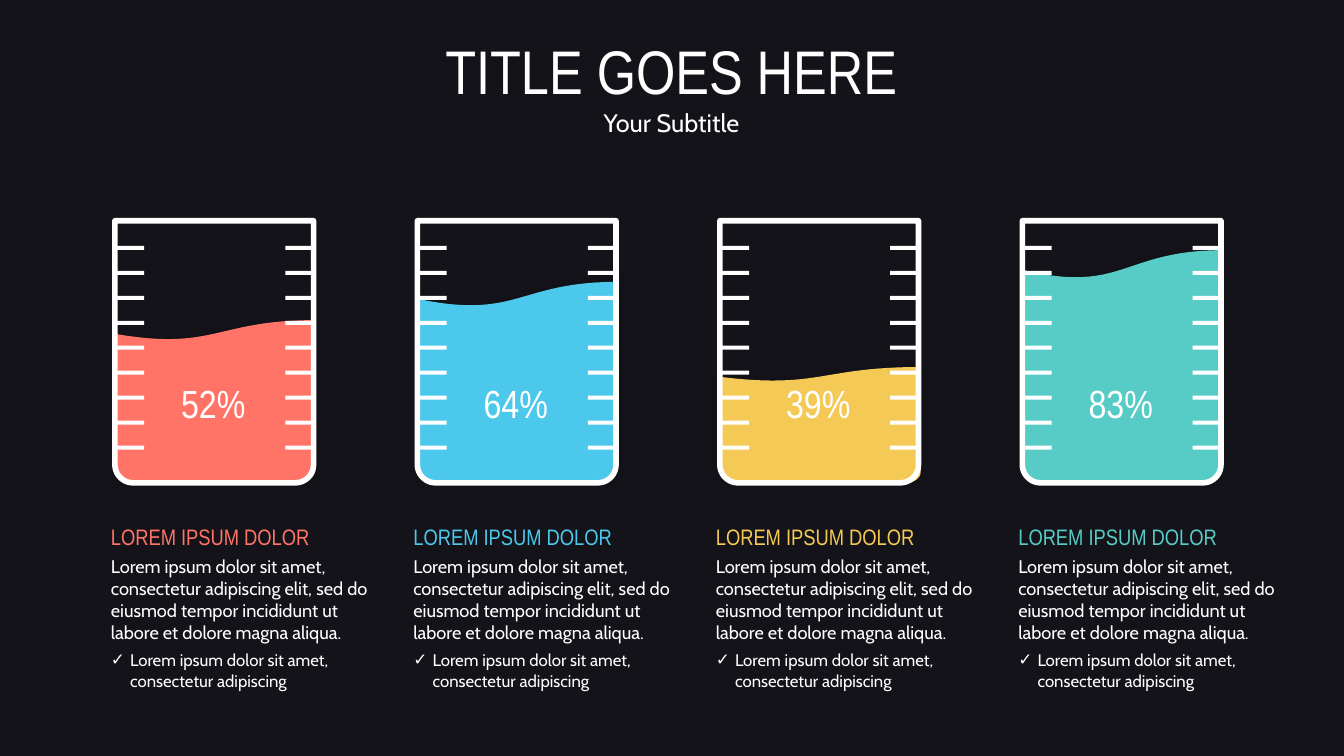
import dataclasses
import typing

import pptx
import pptx.dml.color
import pptx.enum.text
import pptx.oxml
import pptx.oxml.ns
import pptx.util
from pptx.util import Inches

WHITE = "FFFFFF"
BACKGROUND = "14131A"
HEADING_FONT = "Arial Narrow"
BODY_FONT = "Cabin"
COLUMN_PITCH = 3
BEAKER_TOP, BEAKER_BOTTOM = 2.19, 4.79
LIQUID_BOTTOM = 4.8
TICK_COUNT, TICK_TOP, TICK_PITCH = 9, 2.44, 0.2475
TICK_WIDTH, TICK_HEIGHT = 0.3, 0.04

Point = tuple[float, float]


@dataclasses.dataclass(frozen=True)
class Beaker:
    percent: str
    color: str
    liquid_top: float


BEAKERS = [
    Beaker("52%", "FF7467", 3.09),
    Beaker("64%", "4CC8EC", 2.69),
    Beaker("39%", "F4C956", 3.58),
    Beaker("83%", "57CCC6", 2.36),
]


def rgb(color: str) -> pptx.dml.color.RGBColor:
    return pptx.dml.color.RGBColor.from_string(color)


def curve(start: Point, first: Point, second: Point, end: Point, steps: int = 24) -> list[Point]:
    """Return points along a cubic Bezier curve."""
    points = []
    for step in range(steps + 1):
        t = step / steps
        weights = ((1 - t) ** 3, 3 * t * (1 - t) ** 2, 3 * t**2 * (1 - t), t**3)
        points.append(tuple(
            sum(weight * point[axis] for weight, point in zip(weights, (start, first, second, end)))
            for axis in (0, 1)
        ))
    return points


def rounded_bottom(left: float, right: float, bottom: float, radius: Point) -> list[Point]:
    """Return the lower edge from right to left, with both corners rounded."""
    across, up = radius
    return curve(
        (right, bottom - up), (right, bottom - up * 0.45),
        (right - across * 0.45, bottom), (right - across, bottom),
    ) + curve(
        (left + across, bottom), (left + across * 0.45, bottom),
        (left, bottom - up * 0.45), (left, bottom - up),
    )


def add_outline(shapes: typing.Any, contours: list[list[Point]]) -> typing.Any:
    """Add one freeform made of closed contours, without fill or line."""
    contours = [[(Inches(x), Inches(y)) for x, y in contour] for contour in contours]
    builder = shapes.build_freeform(*contours[0][0])
    builder.add_line_segments(contours[0][1:])
    for contour in contours[1:]:
        builder.move_to(*contour[0])
        builder.add_line_segments(contour[1:])
    shape = builder.convert_to_shape()
    shape.shadow.inherit = False
    shape.fill.background()
    shape.line.fill.background()
    return shape


def fill_shape(shape: typing.Any, color: str) -> None:
    shape.fill.solid()
    shape.fill.fore_color.rgb = rgb(color)


def add_glow_shadow(shape: typing.Any) -> None:
    effects = shape.element.spPr.find(pptx.oxml.ns.qn("a:effectLst"))
    effects.append(pptx.oxml.parse_xml(
        f'<a:outerShdw {pptx.oxml.ns.nsdecls("a")} blurRad="{pptx.util.Pt(6)}" dist="0" dir="13500000">'
        '<a:srgbClr val="000000"><a:alpha val="20000"/></a:srgbClr></a:outerShdw>'
    ))


def add_liquid(shapes: typing.Any, beaker: Beaker, offset: float) -> None:
    left, right = offset + 1.14, offset + 3.13
    middle = (left + right) / 2
    top = beaker.liquid_top
    depth = LIQUID_BOTTOM - top
    left_level, dip, right_level = (top + depth * share for share in (0.13, 0.23, 0.05))
    surface = curve((left, left_level), (middle, dip), (middle, right_level), (right, right_level))
    bottom = rounded_bottom(left, right, LIQUID_BOTTOM, (0.19, depth * 0.09))
    liquid = add_outline(shapes, [[(right, top)] + bottom + surface])
    fill_shape(liquid, beaker.color)
    add_glow_shadow(liquid)


def add_glass(shapes: typing.Any, offset: float) -> None:
    """Add the beaker outline with its scale as one group."""
    group = shapes.add_group_shape()
    left, right = offset + 1.14, offset + 3.11
    bottom = rounded_bottom(left, right, BEAKER_BOTTOM, (0.18, 0.18))
    glass = add_outline(group.shapes, [[(left, BEAKER_TOP), (right, BEAKER_TOP)] + bottom])
    glass.line.color.rgb = rgb(WHITE)
    glass.line.width = pptx.util.Pt(4)
    for row in range(TICK_COUNT):
        top = TICK_TOP + row * TICK_PITCH
        ticks = [
            [(x, top), (x + TICK_WIDTH, top), (x + TICK_WIDTH, top + TICK_HEIGHT), (x, top + TICK_HEIGHT)]
            for x in (offset + 2.83, offset + 1.13)
        ]
        fill_shape(add_outline(group.shapes, ticks), WHITE)


def place(shape: typing.Any, left: float, top: float, width: float, height: float) -> None:
    shape.left, shape.top = Inches(left), Inches(top)
    shape.width, shape.height = Inches(width), Inches(height)
    frame = shape.text_frame
    frame.word_wrap = True
    frame.auto_size = pptx.enum.text.MSO_AUTO_SIZE.NONE
    frame.vertical_anchor = pptx.enum.text.MSO_ANCHOR.TOP


def format_paragraph(
    paragraph: typing.Any, font: str, size: float, color: str = WHITE,
    centered: bool = False, before: float = 0, bullet: str = "",
) -> None:
    indent = Inches(0.19) if bullet else 0
    properties = paragraph._p.get_or_add_pPr()
    properties.set("marL", str(indent))
    properties.set("indent", str(-indent))
    mark = f'a:buChar char="{bullet}"' if bullet else "a:buNone"
    properties.append(pptx.oxml.parse_xml(f'<{mark} {pptx.oxml.ns.nsdecls("a")}/>'))
    alignment = pptx.enum.text.PP_ALIGN
    paragraph.alignment = alignment.CENTER if centered else alignment.LEFT
    paragraph.space_before = pptx.util.Pt(before)
    paragraph.font.name = font
    paragraph.font.size = pptx.util.Pt(size)
    paragraph.font.bold = False
    paragraph.font.color.rgb = rgb(color)


def fill_description(placeholder: typing.Any, color: str, offset: float) -> None:
    place(placeholder, offset + 1, 5.14, 2.78, 1.78)
    placeholder.text_frame.text = "\n".join([
        "LOREM IPSUM DOLOR",
        "Lorem ipsum dolor sit amet, consectetur adipiscing elit, "
        "sed do eiusmod tempor incididunt ut labore et dolore magna aliqua.",
        "Lorem ipsum dolor sit amet, consectetur adipiscing",
    ])
    heading, body, item = placeholder.text_frame.paragraphs
    format_paragraph(heading, HEADING_FONT, 16, color)
    format_paragraph(body, BODY_FONT, 13, before=4)
    format_paragraph(item, BODY_FONT, 12, before=5, bullet="✓")


def add_percent(shapes: typing.Any, percent: str, offset: float) -> None:
    label = shapes.add_textbox(0, 0, 0, 0)
    place(label, offset + 1.74, 3.76, 0.75, 0.47)
    frame = label.text_frame
    frame.margin_left = frame.margin_top = frame.margin_right = frame.margin_bottom = 0
    frame.text = percent
    format_paragraph(frame.paragraphs[0], HEADING_FONT, 28, centered=True)


def main() -> None:
    presentation = pptx.Presentation()
    presentation.slide_width, presentation.slide_height = Inches(13.33), Inches(7.5)
    slide = presentation.slides.add_slide(presentation.slide_layouts.get_by_name("Comparison"))
    fill_shape(slide.background, BACKGROUND)

    title, *descriptions = slide.placeholders
    place(title, 3.65, 0.28, 6.02, 1.14)
    title.text_frame.text = "TITLE GOES HERE\nYour Subtitle"
    heading, subtitle = title.text_frame.paragraphs
    format_paragraph(heading, HEADING_FONT, 44, centered=True)
    format_paragraph(subtitle, BODY_FONT, 18, centered=True)

    for column, (beaker, description) in enumerate(zip(BEAKERS, descriptions)):
        offset = column * COLUMN_PITCH
        fill_description(description, beaker.color, offset)
        add_liquid(slide.shapes, beaker, offset)
        add_glass(slide.shapes, offset)
        add_percent(slide.shapes, beaker.percent, offset)

    presentation.save("out.pptx")


if __name__ == "__main__":
    main()
